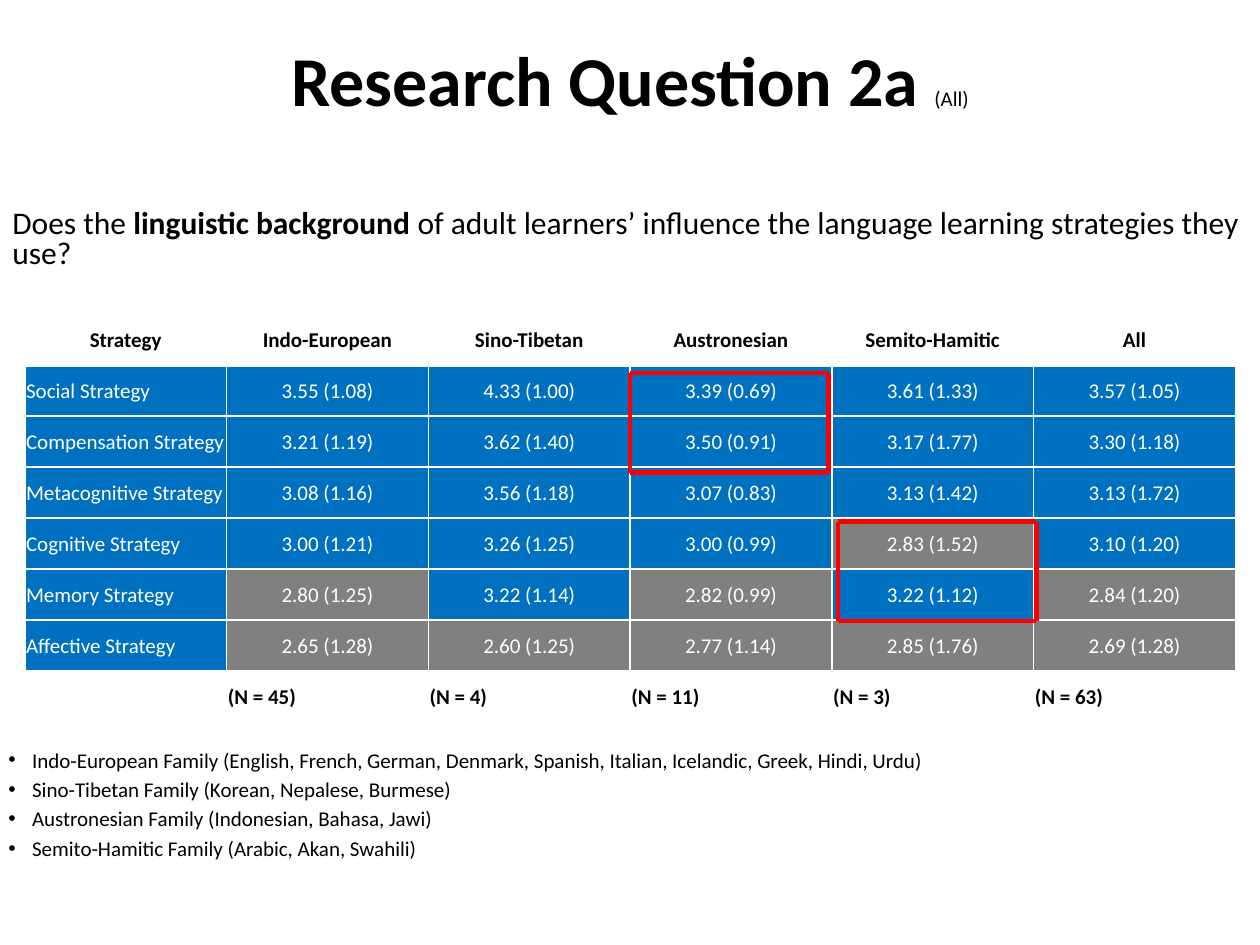
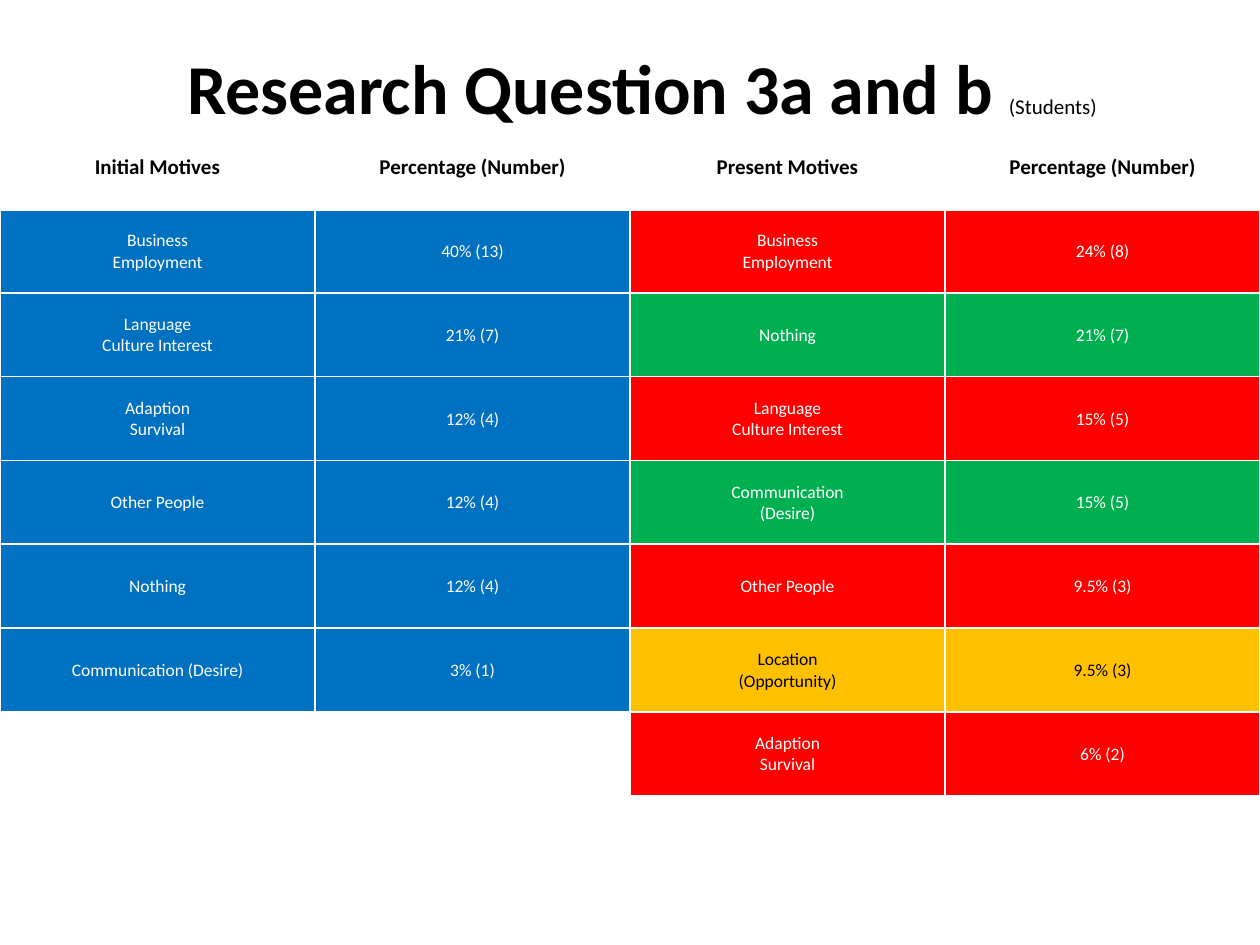
from dataclasses import dataclass

from lxml import etree
from pptx import Presentation
from pptx.dml.color import RGBColor
from pptx.enum.shapes import MSO_CONNECTOR
from pptx.enum.text import MSO_ANCHOR, PP_ALIGN
from pptx.oxml.ns import qn
from pptx.util import Pt

LEFT, CENTER = PP_ALIGN.LEFT, PP_ALIGN.CENTER
TOP, MIDDLE, BOTTOM = MSO_ANCHOR.TOP, MSO_ANCHOR.MIDDLE, MSO_ANCHOR.BOTTOM
STRAIGHT = MSO_CONNECTOR.STRAIGHT


@dataclass(frozen=True)
class Theme:
    font: str = "Calibri"
    black: str = "000000"
    white: str = "FFFFFF"
    blue: str = "0070C0"
    grey: str = "808080"
    red: str = "FF0000"
    green: str = "00B050"
    amber: str = "FFC000"
    title: int = 40
    question: int = 18
    body: int = 12
    small: int = 10


T = Theme()

# ---- Content: strategies by language family ----
QUESTION = [
    ("Does the ", False),
    ("linguistic background ", True),
    ("of adult learners’ influence the language learning strategies they use?", False),
]
STRATEGIES = [
    ("Strategy", "Indo-European", "Sino-Tibetan", "Austronesian", "Semito-Hamitic", "All"),
    ("Social Strategy", "3.55 (1.08)", "4.33 (1.00)", "3.39 (0.69)", "3.61 (1.33)", "3.57 (1.05)"),
    ("Compensation Strategy", "3.21 (1.19)", "3.62 (1.40)", "3.50 (0.91)", "3.17 (1.77)", "3.30 (1.18)"),
    ("Metacognitive Strategy", "3.08 (1.16)", "3.56 (1.18)", "3.07 (0.83)", "3.13 (1.42)", "3.13 (1.72)"),
    ("Cognitive Strategy", "3.00 (1.21)", "3.26 (1.25)", "3.00 (0.99)", "2.83 (1.52)", "3.10 (1.20)"),
    ("Memory Strategy", "2.80 (1.25)", "3.22 (1.14)", "2.82 (0.99)", "3.22 (1.12)", "2.84 (1.20)"),
    ("Affective Strategy", "2.65 (1.28)", "2.60 (1.25)", "2.77 (1.14)", "2.85 (1.76)", "2.69 (1.28)"),
    ("", "(N = 45)", "(N = 4)", "(N = 11)", "(N = 3)", "(N = 63)"),
]
FAMILIES = [
    "Indo-European Family (English, French, German, Denmark, Spanish, Italian, Icelandic, Greek, Hindi, Urdu)",
    "Sino-Tibetan Family (Korean, Nepalese, Burmese)",
    "Austronesian Family (Indonesian, Bahasa, Jawi)",
    "Semito-Hamitic Family (Arabic, Akan, Swahili)",
]
FRAME_CORNERS = [(360, 213.1), (478.8, 298.1)]
FRAME_W, FRAME_H = 113.4, 56.9

# ---- Content: motives of students ----
MOTIVES = [
    ("Initial Motives", "Percentage (Number)", "Present Motives", "Percentage (Number)"),
    ("Business\nEmployment", "40% (13)", "Business\nEmployment", "24% (8)"),
    ("Language\nCulture Interest", "21% (7)", "Nothing", "21% (7)"),
    ("Adaption\nSurvival", "12% (4)", "Language\nCulture Interest", "15% (5)"),
    ("Other People", "12% (4)", "Communication\n(Desire)", "15% (5)"),
    ("Nothing", "12% (4)", "Other People", "9.5% (3)"),
    ("Communication (Desire)", "3% (1)", "Location\n(Opportunity)", "9.5% (3)"),
    ("", "", "Adaption\nSurvival", "6% (2)"),
    ("",) * 4,
    ("",) * 4,
]
PRESENT_FILLS = [T.red, T.green, T.red, T.green, T.red, T.amber, T.red]


# ---- Helpers ----
def rgb(value):
    return RGBColor.from_string(value)


def set_font(p, size, color=T.black, bold=False):
    f = p.font
    f.name, f.size, f.bold = T.font, Pt(size), bold
    f.color.rgb = rgb(color)


def add_text(s, box, anchor=TOP):
    tf = s.shapes.add_textbox(*map(Pt, box)).text_frame
    tf.word_wrap = True
    tf.vertical_anchor = anchor
    return tf


def add_title(s, box, anchor, title, group):
    p = add_text(s, box, anchor).paragraphs[0]
    p.alignment = CENTER
    p.font.name = T.font
    p.font.color.rgb = rgb(T.black)
    for text, size, bold in ((title, T.title, True), (group, T.body, False)):
        r = p.add_run()
        r.text, r.font.size, r.font.bold = text, Pt(size), bold


def add_borders(cell, bottom):
    tc_pr = cell._tc.get_or_add_tcPr()
    for side, width in (("L", 1), ("R", 1), ("T", 1), ("B", bottom)):
        ln = etree.SubElement(tc_pr, qn(f"a:ln{side}"), w=str(Pt(width)))
        fill = etree.SubElement(ln, qn("a:solidFill"))
        etree.SubElement(fill, qn("a:srgbClr"), val=T.white)


def add_table(s, rows, box, heights, style):
    """style(row, col, text) gives fill, text colour, size, bold and alignment."""
    n = len(rows[0])
    table = s.shapes.add_table(len(rows), n, *map(Pt, box)).table
    table.horz_banding = False
    for col in table.columns:
        col.width = Pt(box[2] / n)
    for i, (row, height) in enumerate(zip(rows, heights)):
        table.rows[i].height = Pt(height)
        for j, text in enumerate(row):
            fill, color, size, bold, align = style(i, j, text)
            cell = table.cell(i, j)
            cell.margin_left = cell.margin_right = cell.margin_top = Pt(0.72)
            cell.margin_bottom = 0
            cell.vertical_anchor = MIDDLE
            add_borders(cell, 3 if i == 0 else 1)
            cell.fill.solid()
            cell.fill.fore_color.rgb = rgb(fill)
            cell.text = text
            for p in cell.text_frame.paragraphs:
                p.alignment = align
                set_font(p, size, color, bold)


def add_frame(s, x, y):
    right, bottom = x + FRAME_W, y + FRAME_H
    corners = [(x, y), (right, y), (right, bottom), (x, bottom)]
    for start, end in zip(corners, corners[1:] + corners[:1]):
        line = s.shapes.add_connector(STRAIGHT, *map(Pt, start + end))
        line.line.color.rgb = rgb(T.red)
        line.line.width = Pt(2.5)
        etree.SubElement(line._element.spPr, qn("a:effectLst"))


# ---- Cell rules ----
def strategy_style(i, j, text):
    if i == 0:
        return T.white, T.black, T.body, True, CENTER
    if i == len(STRATEGIES) - 1:
        return T.white, T.black, T.body, True, LEFT
    if j == 0:
        return T.blue, T.white, T.body, False, LEFT
    mean = float(text.split()[0])
    return T.grey if mean < 3 else T.blue, T.white, T.body, False, CENTER


def motive_style(i, j, text):
    if i == 0:
        return T.white, T.black, T.body, True, CENTER
    if not text:
        fill = T.white
    else:
        fill = T.blue if j < 2 else PRESENT_FILLS[i - 1]
    color = T.black if fill == T.amber else T.white
    return fill, color, T.small, False, CENTER


# ---- Slides ----
def strategies_slide(s):
    add_title(s, (60, 0, 600, 90), MIDDLE, "Research Question 2a ", "(All)")
    add_table(s, STRATEGIES, (14.2, 179.5, 691.8, 233.2), [29.15] * len(STRATEGIES), strategy_style)

    # Language families
    tf = add_text(s, (-2.2, 423.4, 720, 47.5))
    for i, family in enumerate(FAMILIES):
        p = tf.paragraphs[0] if i == 0 else tf.add_paragraph()
        p.text = family
        if i:
            p.space_before = Pt(2.4)
        p_pr = p._p.get_or_add_pPr()
        p_pr.set("marL", str(Pt(13.5)))
        p_pr.set("indent", str(-Pt(13.5)))
        etree.SubElement(p_pr, qn("a:buFont"), typeface="Arial")
        etree.SubElement(p_pr, qn("a:buChar"), char="•")
        set_font(p, T.body)

    # Question
    p = add_text(s, (0, 116.6, 720, 47.5)).paragraphs[0]
    p.line_spacing = 0.8
    p.font.name, p.font.size = T.font, Pt(T.question)
    p.font.color.rgb = rgb(T.black)
    for text, bold in QUESTION:
        r = p.add_run()
        r.text, r.font.bold = text, bold

    # Frames around the marked means
    for x, y in FRAME_CORNERS:
        add_frame(s, x, y)


def motives_slide(s):
    add_title(s, (36.7, 0, 663, 77), BOTTOM, "Research Question 3a and b ", "(Students) ")
    add_table(s, MOTIVES, (0, 71.6, 720, 470.7), [47.9] * 9 + [39.6], motive_style)


def main():
    prs = Presentation()
    prs.slide_width, prs.slide_height = Pt(720), Pt(540)
    for build in (strategies_slide, motives_slide):
        build(prs.slides.add_slide(prs.slide_layouts[6]))
    prs.save("out.pptx")


if __name__ == "__main__":
    main()
